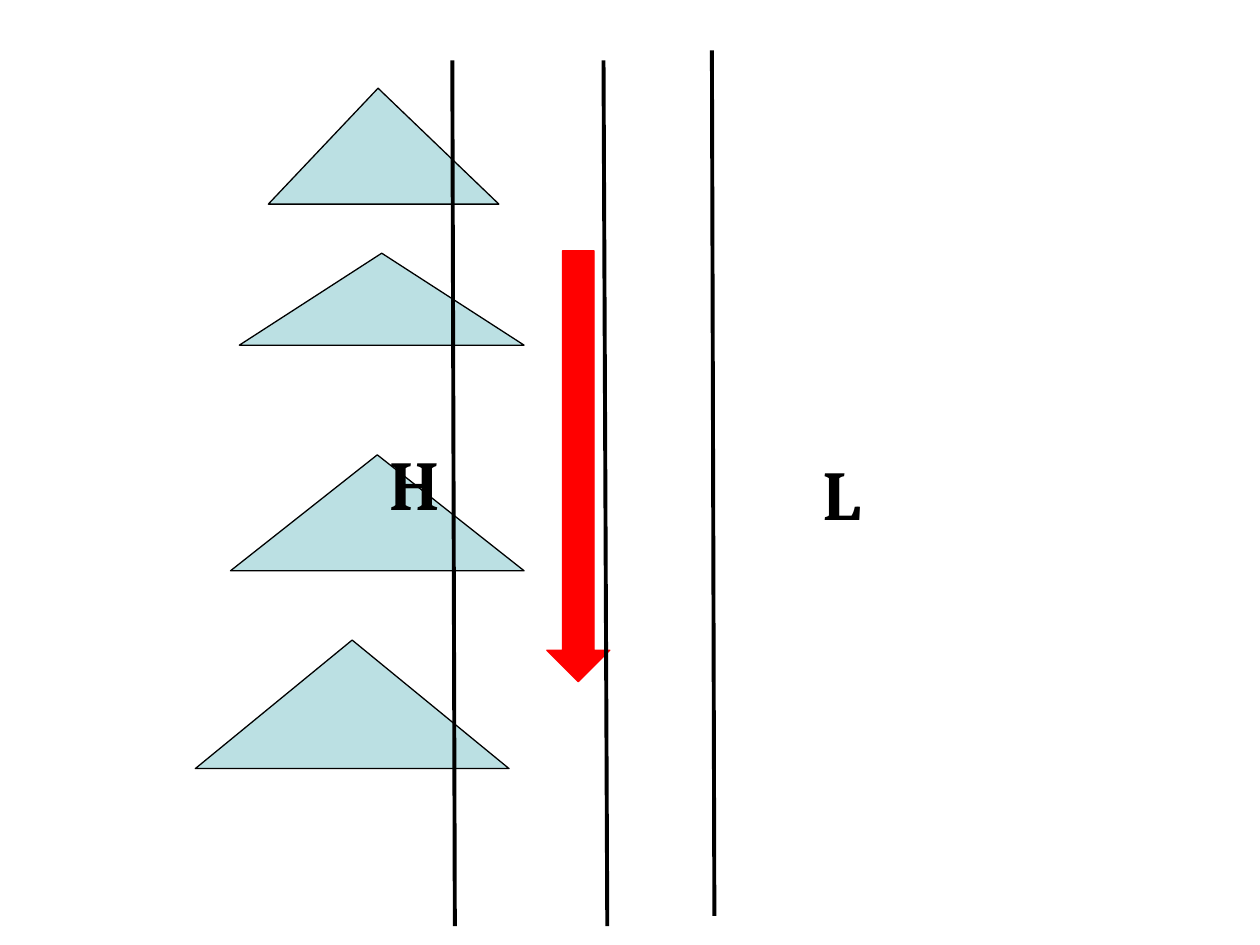
from lxml.etree import SubElement
from pptx import Presentation
from pptx.dml.color import RGBColor
from pptx.enum.shapes import MSO_CONNECTOR, MSO_SHAPE
from pptx.enum.text import MSO_AUTO_SIZE
from pptx.oxml.ns import qn
from pptx.util import Inches, Pt

COLORS = {"mountain": "BBE0E3", "wind": "FF0000", "ink": "000000"}

# left, top, width, height, apex position
MOUNTAINS = [
    (2.13, 0.7, 1.83, 0.92, 0.476),
    (1.9, 2.01, 2.26, 0.73, 0.5),
    (1.83, 3.61, 2.33, 0.92, 0.5),
    (1.55, 5.08, 2.49, 1.02, 0.5),
]
# top x, top y, bottom x
ISOBARS = [(3.59, 0.48, 3.61), (4.79, 0.48, 4.82), (5.65, 0.4, 5.67)]
ISOBAR_HEIGHT = 6.87
PRESSURE_LABELS = [("H", 2.99, 3.45, 0.64), ("L", 6.43, 3.53, 0.58)]


def color(name):
    return RGBColor.from_string(COLORS[name])


def add_filled_shape(slide, kind, box, fill, line):
    s = slide.shapes.add_shape(kind, *map(Inches, box))
    s.shadow.inherit = False
    s.fill.solid()
    s.fill.fore_color.rgb = color(fill)
    s.line.color.rgb = color(line)
    s.line.width = Pt(0.75)
    return s


def add_isobar(slide, x1, y1, x2):
    line = slide.shapes.add_connector(
        MSO_CONNECTOR.STRAIGHT,
        *map(Inches, (x1, y1, x2, y1 + ISOBAR_HEIGHT)))
    line.line.color.rgb = color("ink")
    line.line.width = Pt(2.25)
    SubElement(line._element.spPr, qn("a:effectLst"))


def add_pressure_label(slide, text, x, y, width):
    box = slide.shapes.add_textbox(*map(Inches, (x, y, width, 0.77)))
    tf = box.text_frame
    tf.word_wrap = False
    tf.auto_size = MSO_AUTO_SIZE.SHAPE_TO_FIT_TEXT
    p = tf.paragraphs[0]
    p.text = text
    p.font.name = "Cambria"
    p.font.size = Pt(40)
    p.font.bold = True
    p.font.color.rgb = color("ink")


def main():
    prs = Presentation()
    prs.slide_width, prs.slide_height = Inches(10), Inches(7.5)
    slide = prs.slides.add_slide(prs.slide_layouts[6])

    for *box, apex in MOUNTAINS:
        s = add_filled_shape(slide, MSO_SHAPE.ISOSCELES_TRIANGLE, box,
                             "mountain", "ink")
        s.adjustments[0] = apex
    add_filled_shape(slide, MSO_SHAPE.DOWN_ARROW, (4.34, 1.99, 0.5, 3.42),
                     "wind", "wind")
    for isobar in ISOBARS:
        add_isobar(slide, *isobar)
    for label in PRESSURE_LABELS:
        add_pressure_label(slide, *label)

    prs.save("out.pptx")


if __name__ == "__main__":
    main()
